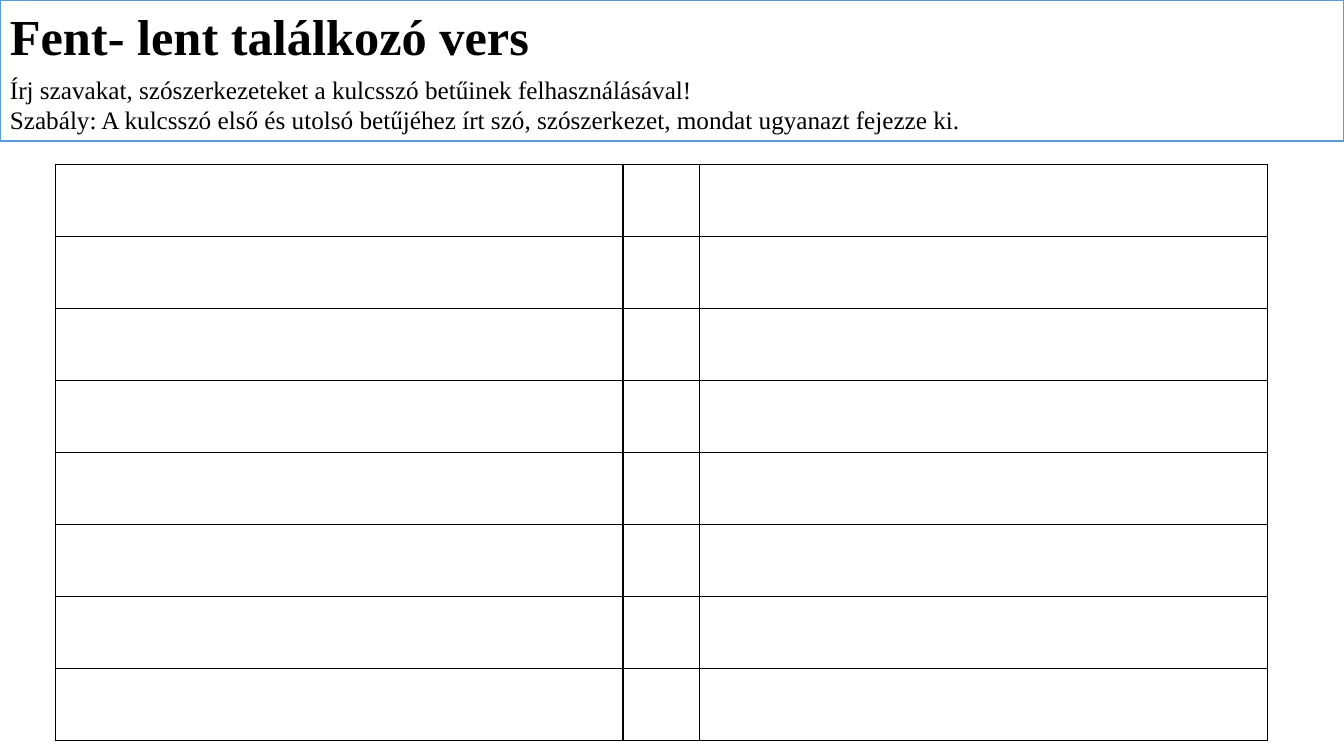
from lxml.etree import SubElement
from pptx import Presentation
from pptx.dml.color import RGBColor
from pptx.enum.text import MSO_ANCHOR, PP_ALIGN
from pptx.oxml.ns import qn
from pptx.util import Inches, Pt

FONT = "Times New Roman"
HEADING = [
    ("Fent- lent találkozó vers", 36, True, 6),
    ("Írj szavakat, szószerkezeteket a kulcsszó betűinek felhasználásával!", 18, False, 0),
    ("Szabály: A kulcsszó első és utolsó betűjéhez írt szó, szószerkezet, "
     "mondat ugyanazt fejezze ki.", 18, False, 0),
]
COLS = [5.63, 0.76, 5.63]
ROWS = 8
ROW_HEIGHT = 0.715


def paint(color, value):
    color.rgb = RGBColor.from_string(value)


def fill_solid(fill, value):
    fill.solid()
    paint(fill.fore_color, value)


def add_heading(slide):
    box = slide.shapes.add_shape(1, 0, 0, Inches(13.33), Inches(1.4))
    box.shadow.inherit = False
    fill_solid(box.fill, "FFFFFF")
    paint(box.line.color, "5B9BD5")
    box.line.width = Pt(1)
    frame = box.text_frame
    frame.word_wrap = True
    frame.vertical_anchor = MSO_ANCHOR.TOP
    frame.text = "\n".join(line[0] for line in HEADING)
    for paragraph, (_, size, bold, after) in zip(frame.paragraphs, HEADING):
        paragraph.alignment = PP_ALIGN.LEFT
        paragraph.space_after = Pt(after)
        font = paragraph.runs[0].font
        font.name, font.size, font.bold = FONT, Pt(size), bold
        paint(font.color, "000000")


def set_borders(cell, value, width):
    props = cell._tc.get_or_add_tcPr()
    for index, side in enumerate(("lnL", "lnR", "lnT", "lnB")):
        line = props.makeelement(qn(f"a:{side}"), {"w": str(Pt(width))})
        props.insert(index, line)
        solid = SubElement(line, qn("a:solidFill"))
        SubElement(solid, qn("a:srgbClr"), val=value)


def add_grid(slide):
    table = slide.shapes.add_table(
        ROWS, len(COLS), Inches(0.55), Inches(1.63),
        Inches(sum(COLS)), Inches(ROWS * ROW_HEIGHT)).table
    table.first_row = table.horz_banding = False
    for column, width in zip(table.columns, COLS):
        column.width = Inches(width)
    for cell in table.iter_cells():
        fill_solid(cell.fill, "FFFFFF")
        set_borders(cell, "000000", 1)


def main():
    deck = Presentation()
    deck.slide_width, deck.slide_height = Inches(13.33), Inches(7.5)
    slide = deck.slides.add_slide(deck.slide_layouts[6])
    add_heading(slide)
    add_grid(slide)
    deck.save("out.pptx")


if __name__ == "__main__":
    main()
